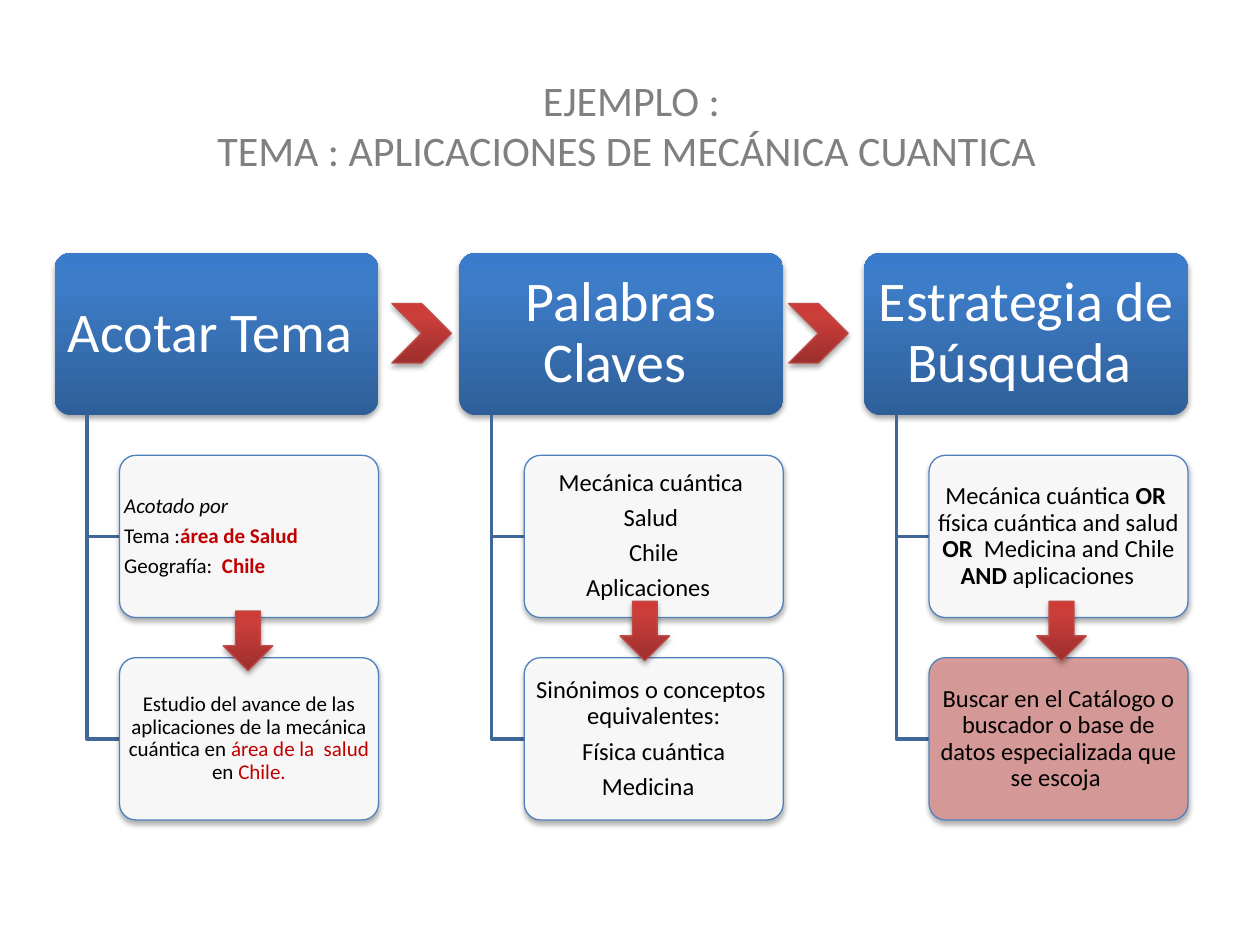
from dataclasses import dataclass

import pptx
import pptx.dml.color
import pptx.enum.shapes
import pptx.enum.text
import pptx.oxml.ns
import pptx.util
from lxml import etree

Cm = pptx.util.Cm
Pt = pptx.util.Pt
SHAPE = pptx.enum.shapes.MSO_SHAPE
ALIGN = pptx.enum.text.PP_ALIGN
qn = pptx.oxml.ns.qn


@dataclass(frozen=True)
class Theme:
    font: str = "Calibri"
    title_size: int = 24
    header_size: int = 32
    card_size: int = 14
    small_size: int = 12
    title: str = "808080"
    white: str = "FFFFFF"
    black: str = "000000"
    accent: str = "C00000"
    rose: str = "D99694"
    card_line: str = "4F81BD"
    branch: str = "3F6797"
    arrow_line: str = "BF4C48"
    blue: tuple = ((0, "2F5F99"), (80, "3D7CC7"), (100, "3A7CCB"))
    red: tuple = ((0, "9C2F2D"), (80, "CB3E3A"), (100, "CE3B37"))


T = Theme()

# Layout in centimetres
LEFT, TOP, COLUMN_PITCH = 1.1, 5.1, 8.16
HEADER_W, BOX_H = 6.53, 3.27
CARD_DX, CARD_TOP, CARD_W, CARD_PITCH = 1.31, 9.18, 5.22, 4.08
BRANCH_DX = 0.65
ARROW_W, ARROW_L = 1.0, 1.2

# Each card: size, alignment, fill, paragraphs of (text, style) runs.
# Style letters: i = italic, b = bold, c = accent colour
COLUMNS = [
    ("Acotar Tema ", [
        (T.small_size, ALIGN.LEFT, T.white, [
            [("Acotado por", "i")],
            [("Tema :", ""), ("área de Salud", "bc")],
            [("Geografía:  ", ""), ("Chile", "bc")]]),
        (T.small_size, ALIGN.CENTER, T.white, [
            [("Estudio del avance de las aplicaciones de la mecánica cuántica en ", ""),
             ("área de la  salud ", "c"), ("en ", ""), ("Chile.", "c")]]),
    ]),
    ("Palabras Claves ", [
        (T.card_size, ALIGN.CENTER, T.white, [
            [("Mecánica cuántica ", "")], [("Salud ", "")],
            [("Chile", "")], [("Aplicaciones  ", "")]]),
        (T.card_size, ALIGN.CENTER, T.white, [
            [("Sinónimos o conceptos  equivalentes:", "")],
            [("Física cuántica", "")], [("Medicina  ", "")]]),
    ]),
    ("Estrategia de Búsqueda ", [
        (T.card_size, ALIGN.CENTER, T.white, [
            [("Mecánica cuántica ", ""), ("OR", "b"),
             ("  física cuántica and salud ", ""), ("OR", "b"),
             ("  Medicina and Chile ", ""), ("AND", "b"),
             (" aplicaciones    ", "")]]),
        (T.card_size, ALIGN.CENTER, T.rose, [
            [("Buscar en el Catálogo o buscador o base de datos "
              "especializada que se escoja ", "")]]),
    ]),
]
DOWN_ARROWS = [(4.5, 12.32), (12.5, 12.12), (20.9, 12.12)]
CHEVRONS = [(7.9, 6.12), (15.9, 6.12)]


def rgb(value):
    return pptx.dml.color.RGBColor.from_string(value)


def add_color(parent, value, alpha=None):
    color = etree.SubElement(parent, qn("a:srgbClr"), val=value)
    if alpha:
        etree.SubElement(color, qn("a:alpha"), val=str(alpha * 1000))


def set_gradient(sp, stops):
    """Fill from bottom to top with (percent, colour) stops."""
    sp.fill.gradient()
    sp.fill.gradient_angle = 90
    stop_list = sp.element.spPr.find(".//" + qn("a:gsLst"))
    for old in list(stop_list):
        stop_list.remove(old)
    for percent, color in stops:
        stop = etree.SubElement(stop_list, qn("a:gs"), pos=str(percent * 1000))
        add_color(stop, color)


def set_shadow(sp):
    sp.shadow.inherit = False
    effects = sp.element.spPr.find(qn("a:effectLst"))
    shadow = etree.SubElement(effects, qn("a:outerShdw"), blurRad=str(Pt(3.1)),
                              dist=str(Pt(1.8)), dir="5400000", rotWithShape="0")
    add_color(shadow, T.black, 35)


def set_line(sp, color, width):
    sp.line.color.rgb = rgb(color)
    sp.line.width = Pt(width)


def add_box(slide, kind, x, y, w, h):
    sp = slide.shapes.add_shape(kind, Cm(x), Cm(y), Cm(w), Cm(h))
    set_shadow(sp)
    return sp


def add_run(p, text, size, color, style=""):
    r = p.add_run()
    r.text = text
    r.font.name = T.font
    r.font.size = Pt(size)
    r.font.color.rgb = rgb(T.accent if "c" in style else color)
    r.font.bold = "b" in style
    r.font.italic = "i" in style


def write(sp, paragraphs, size, color, align, inset):
    tf = sp.text_frame
    tf.word_wrap = True
    tf.vertical_anchor = pptx.enum.text.MSO_ANCHOR.MIDDLE
    tf.margin_left = tf.margin_right = Cm(inset)
    tf.margin_top = tf.margin_bottom = 0
    for i, runs in enumerate(paragraphs):
        p = tf.add_paragraph() if i else tf.paragraphs[0]
        p.alignment = align
        p.line_spacing = 0.9
        p.space_after = Pt(round(size * 0.35, 1))
        for text, style in runs:
            add_run(p, text, size, color, style)


def add_title(slide):
    sp = slide.shapes.add_textbox(Cm(1.3), Cm(0.33), Cm(22.86), Cm(4.37))
    tf = sp.text_frame
    tf.word_wrap = True
    tf.vertical_anchor = pptx.enum.text.MSO_ANCHOR.MIDDLE
    p = tf.paragraphs[0]
    p.alignment = ALIGN.CENTER
    add_run(p, "EJEMPLO :", T.title_size, T.title)
    p.add_line_break()
    add_run(p, "TEMA : APLICACIONES DE MECÁNICA CUANTICA ", T.title_size, T.title)


def add_header(slide, x, text):
    sp = add_box(slide, SHAPE.ROUNDED_RECTANGLE, x, TOP, HEADER_W, BOX_H)
    sp.adjustments[0] = 0.1
    set_gradient(sp, T.blue)
    sp.line.fill.background()
    write(sp, [[(text, "")]], T.header_size, T.white, ALIGN.CENTER, 0.08)


def add_branch(slide, x, card_x, y):
    """Draw the elbow from the header's foot to a card's left edge."""
    builder = slide.shapes.build_freeform(Cm(x), Cm(TOP + BOX_H))
    builder.add_line_segments([(Cm(x), Cm(y)), (Cm(card_x), Cm(y))], close=False)
    sp = builder.convert_to_shape()
    sp.fill.background()
    set_line(sp, T.branch, 2)
    sp.shadow.inherit = False


def add_card(slide, x, y, size, align, fill, paragraphs):
    sp = add_box(slide, SHAPE.ROUNDED_RECTANGLE, x, y, CARD_W, BOX_H)
    sp.adjustments[0] = 0.1
    sp.fill.solid()
    sp.fill.fore_color.rgb = rgb(fill)
    color = sp.element.spPr.find(qn("a:solidFill")).find(qn("a:srgbClr"))
    etree.SubElement(color, qn("a:alpha"), val="90000")
    set_line(sp, T.card_line, 0.75)
    write(sp, paragraphs, size, T.black, align, 0)


def add_arrow(slide, kind, x, y, w):
    sp = add_box(slide, kind, x, y, w, ARROW_L)
    set_gradient(sp, T.red)
    set_line(sp, T.arrow_line, 0.75)


def main():
    prs = pptx.Presentation()
    prs.slide_width, prs.slide_height = Cm(25.4), Cm(19.05)
    slide = prs.slides.add_slide(prs.slide_layouts[6])
    add_title(slide)
    for col, (header, cards) in enumerate(COLUMNS):
        x = LEFT + col * COLUMN_PITCH
        add_header(slide, x, header)
        for row, card in enumerate(cards):
            y = CARD_TOP + row * CARD_PITCH
            add_branch(slide, x + BRANCH_DX, x + CARD_DX, y + BOX_H / 2)
            add_card(slide, x + CARD_DX, y, *card)
    for x, y in DOWN_ARROWS:
        add_arrow(slide, SHAPE.DOWN_ARROW, x, y, ARROW_W)
    for x, y in CHEVRONS:
        add_arrow(slide, SHAPE.CHEVRON, x, y, ARROW_L)
    prs.save("out.pptx")


if __name__ == "__main__":
    main()
